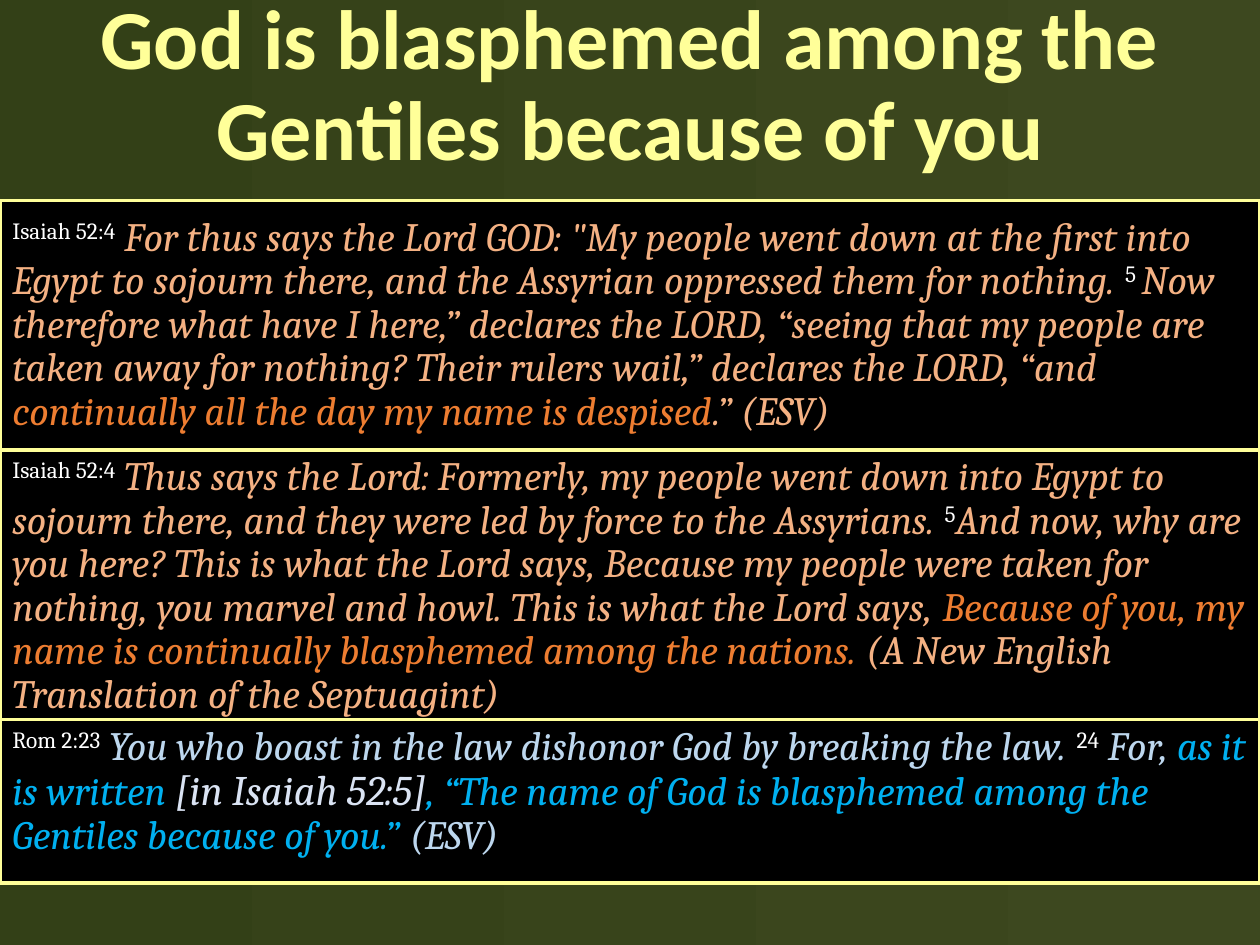
from pptx import Presentation
from pptx.dml.color import RGBColor
from pptx.enum.shapes import MSO_SHAPE
from pptx.enum.text import MSO_ANCHOR, PP_ALIGN
from pptx.util import Inches, Pt

RECTANGLE = MSO_SHAPE.RECTANGLE
TOP, MIDDLE = MSO_ANCHOR.TOP, MSO_ANCHOR.MIDDLE
LEFT, CENTER = PP_ALIGN.LEFT, PP_ALIGN.CENTER

OLIVE = RGBColor(0x3D, 0x48, 0x1F)
DARK_OLIVE = RGBColor(0x33, 0x40, 0x17)
BLACK = RGBColor(0, 0, 0)
WHITE = RGBColor(0xFF, 0xFF, 0xFF)
YELLOW = RGBColor(0xFF, 0xFF, 0x99)
PEACH = RGBColor(0xF4, 0xB1, 0x83)
ORANGE = RGBColor(0xED, 0x7D, 0x31)
PALE_BLUE = RGBColor(0xBD, 0xD7, 0xEE)
BRIGHT_BLUE = RGBColor(0x00, 0xB0, 0xF0)
LAVENDER = RGBColor(0xDA, 0xE3, 0xF3)

SLIDE_WIDTH = 10
LINE_SPACING = 0.9
VERSE_SIZE = 23
NOTE_SIZE = 24

ISAIAH_ESV = [
    ("Isaiah 52:4", WHITE),
    (' For thus says the Lord GOD: "My people went down at the first into Egypt '
     "to sojourn there, and the Assyrian oppressed them for nothing. ", PEACH),
    ("5 ", WHITE),
    ("Now therefore what have I here,” declares the LORD, “seeing that my people "
     "are taken away for nothing? Their rulers wail,” declares the LORD, “and ", PEACH),
    ("continually all the day my name is despised", ORANGE),
    (".” (ESV)", PEACH),
]
ISAIAH_SEPTUAGINT = [
    ("Isaiah 52:4", WHITE),
    (" Thus says the Lord: Formerly, my people went down into Egypt to sojourn "
     "there, and they were led by force to the Assyrians. ", PEACH),
    ("5", WHITE),
    ("And now, why are you here? This is what the Lord says, Because my people "
     "were taken for nothing, you marvel and howl. This is what the Lord says, ", PEACH),
    ("Because of you, my name is continually blasphemed among the nations.", ORANGE),
    (" (A New English Translation of the Septuagint)", PEACH),
]
ROMANS = [
    ("Rom 2:23", WHITE),
    (" You who boast in the law dishonor God by breaking the law. ", PALE_BLUE),
    ("24", WHITE),
    (" For, ", PALE_BLUE),
    ("as it is written ", BRIGHT_BLUE),
    ("[in Isaiah 52:5]", LAVENDER),
    (", “The name of God is blasphemed among the Gentiles because of you.” ", BRIGHT_BLUE),
    ("(ESV)", PALE_BLUE),
]
PASSAGES = [
    (ISAIAH_ESV, 1.98, MIDDLE),
    (ISAIAH_SEPTUAGINT, 2.14, TOP),
    (ROMANS, 1.3, TOP),
]
PASSAGES_TOP = 1.59


def paint_background(slide):
    fill = slide.background.fill
    fill.gradient()
    fill.gradient_angle = 180
    for stop, color, position in zip(fill.gradient_stops, (OLIVE, DARK_OLIVE), (0, 1)):
        stop.color.rgb = color
        stop.position = position


def prepare_paragraph(frame, anchor, alignment):
    frame.word_wrap = True
    frame.vertical_anchor = anchor
    paragraph = frame.paragraphs[0]
    paragraph.alignment = alignment
    paragraph.line_spacing = LINE_SPACING
    return paragraph


def style_font(font, name, size, color):
    font.name = name
    font.size = Pt(size)
    font.color.rgb = color


def add_title(slide, text):
    title = slide.shapes.add_textbox(0, 0, Inches(SLIDE_WIDTH), Inches(1.39))
    title.text_frame.text = text
    heading = prepare_paragraph(title.text_frame, MIDDLE, CENTER)
    font = heading.runs[0].font
    style_font(font, "Calibri", 48, YELLOW)
    font.bold = True


def add_verse_run(paragraph, text, color):
    run = paragraph.add_run()
    run.text = text
    size = NOTE_SIZE if color == LAVENDER else VERSE_SIZE
    style_font(run.font, "Cambria", size, color)
    if color == WHITE:
        run._r.get_or_add_rPr().set("baseline", "30000")
    else:
        run.font.italic = True


def add_passage(slide, verses, top, height, anchor):
    panel = slide.shapes.add_shape(
        RECTANGLE, 0, Inches(top), Inches(SLIDE_WIDTH), Inches(height))
    panel.shadow.inherit = False
    panel.fill.solid()
    panel.fill.fore_color.rgb = BLACK
    panel.line.color.rgb = YELLOW
    panel.line.width = Pt(2)
    paragraph = prepare_paragraph(panel.text_frame, anchor, LEFT)
    for text, color in verses:
        add_verse_run(paragraph, text, color)


def main():
    presentation = Presentation()
    presentation.slide_width = Inches(SLIDE_WIDTH)
    presentation.slide_height = Inches(7.5)
    slide = presentation.slides.add_slide(presentation.slide_layouts[6])
    paint_background(slide)
    add_title(slide, "God is blasphemed among the Gentiles because of you")
    top = PASSAGES_TOP
    for verses, height, anchor in PASSAGES:
        add_passage(slide, verses, top, height, anchor)
        top += height
    presentation.save("out.pptx")


if __name__ == "__main__":
    main()
